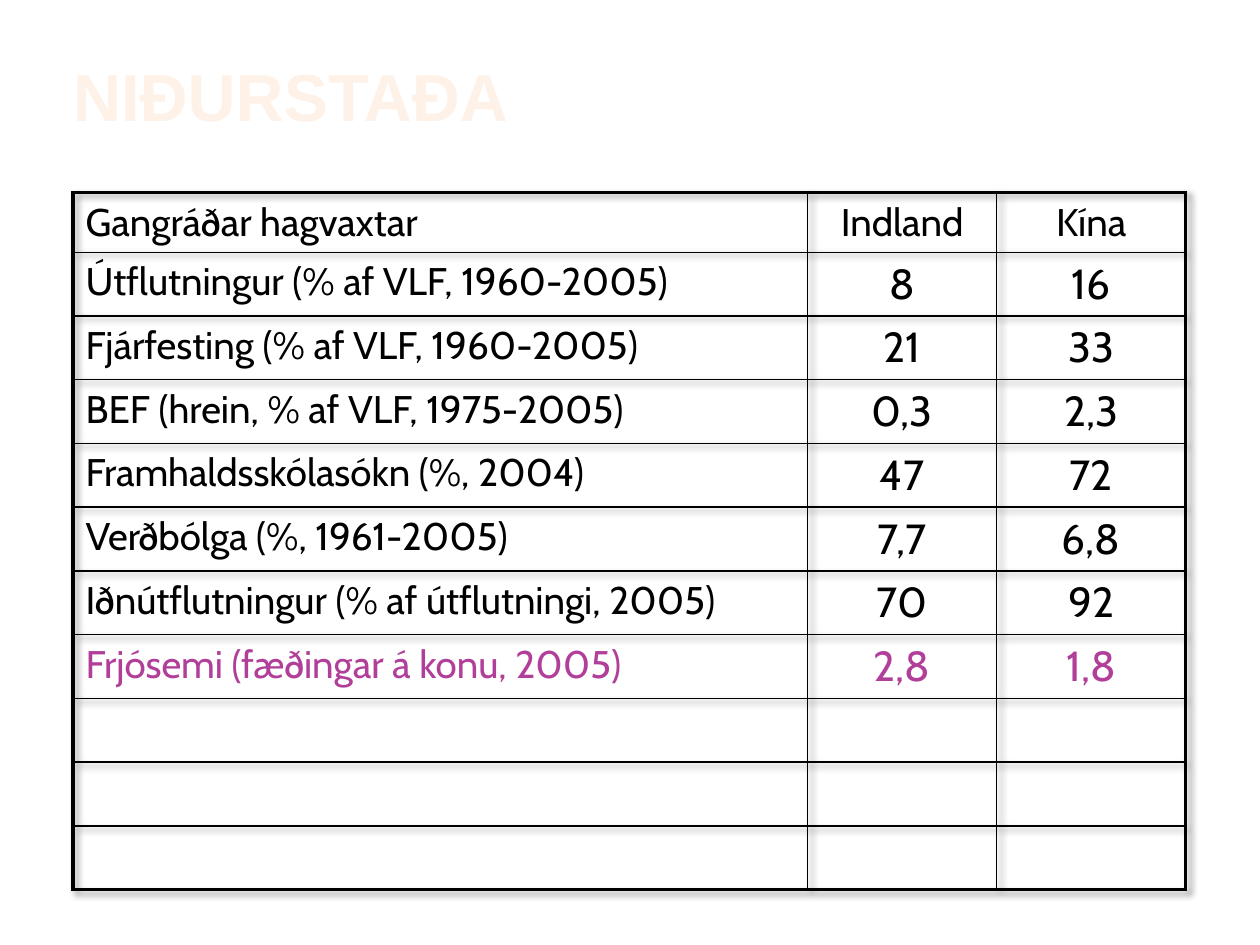
from dataclasses import dataclass

from lxml import etree
from pptx import Presentation
from pptx.dml.color import RGBColor
from pptx.enum.text import MSO_ANCHOR, PP_ALIGN
from pptx.oxml.ns import qn
from pptx.util import Inches, Pt

LEFT, CENTER = PP_ALIGN.LEFT, PP_ALIGN.CENTER
TOP, MIDDLE = MSO_ANCHOR.TOP, MSO_ANCHOR.MIDDLE


@dataclass(frozen=True)
class Theme:
    title_font: str = "Arial"
    body_font: str = "Cabin"
    title_color: str = "FEF2E8"
    text_color: str = "000000"
    accent_color: str = "B13F9A"
    line_color: str = "000000"
    title_size: float = 38
    label_size: float = 22
    value_size: float = 24
    outer_line: float = 2.25
    inner_line: float = 1


THEME = Theme()
TITLE = "NIÐURSTAÐA"
ROWS = [
    ("Gangráðar hagvaxtar", "Indland", "Kína"),
    ("Útflutningur (% af VLF, 1960-2005)", "8", "16"),
    ("Fjárfesting (% af VLF, 1960-2005)", "21", "33"),
    ("BEF (hrein, % af VLF, 1975-2005)", "0,3", "2,3"),
    ("Framhaldsskólasókn (%, 2004)", "47", "72"),
    ("Verðbólga (%, 1961-2005)", "7,7", "6,8"),
    ("Iðnútflutningur (% af útflutningi, 2005)", "70", "92"),
    ("Frjósemi (fæðingar á konu, 2005)", "2,8", "1,8"),
    ("", "", ""),
    ("", "", ""),
    ("", "", ""),
]
ACCENT_ROW = 7
COLUMN_WIDTHS = (5.83, 1.5, 1.5)
TABLE_HEIGHT = 5.53
HEADER_HEIGHT = 0.47


def style_paragraph(para, font, size, color, bold=False, align=LEFT):
    para.alignment = align
    para.font.name = font
    para.font.size = Pt(size)
    para.font.bold = bold
    para.font.color.rgb = RGBColor.from_string(color)


def add_title(page):
    title = page.shapes.title
    title.left, title.top = Inches(0.58), Inches(0.35)
    title.width, title.height = Inches(8.83), Inches(0.8)
    frame = title.text_frame
    frame.text = TITLE
    frame.margin_left = 0
    frame.vertical_anchor = MIDDLE
    style_paragraph(frame.paragraphs[0], THEME.title_font, THEME.title_size,
                    THEME.title_color, bold=True)


def add_solid_color(parent, color):
    fill = etree.SubElement(parent, qn("a:solidFill"))
    etree.SubElement(fill, qn("a:srgbClr"), val=color)


def set_borders(cell, outer_edges):
    properties = cell._tc.get_or_add_tcPr()
    for tag, outer in zip(("a:lnL", "a:lnR", "a:lnT", "a:lnB"), outer_edges):
        width = THEME.outer_line if outer else THEME.inner_line
        line = etree.SubElement(properties, qn(tag), w=str(Pt(width)))
        add_solid_color(line, THEME.line_color)


def add_table_shadow(table):
    effects = etree.Element(qn("a:effectLst"))
    shadow = etree.SubElement(effects, qn("a:outerShdw"), blurRad=str(Pt(4)),
                              dist=str(Pt(3)), dir="2700000", algn="tl")
    color = etree.SubElement(shadow, qn("a:prstClr"), val="black")
    etree.SubElement(color, qn("a:alpha"), val="40000")
    table._tbl.tblPr.insert(0, effects)


def fill_cell(cell, text, row, column):
    cell.text = text
    cell.vertical_anchor = TOP
    is_label = row == 0 or column == 0 and text
    style_paragraph(
        cell.text_frame.paragraphs[0],
        THEME.body_font,
        THEME.label_size if is_label else THEME.value_size,
        THEME.accent_color if row == ACCENT_ROW else THEME.text_color,
        align=CENTER if column else LEFT,
    )
    set_borders(cell, (column == 0, column == len(COLUMN_WIDTHS) - 1,
                       row == 0, row == len(ROWS) - 1))
    cell.fill.background()


def add_growth_table(page):
    frame = page.shapes.add_table(
        len(ROWS), len(COLUMN_WIDTHS), Inches(0.58), Inches(1.53),
        Inches(sum(COLUMN_WIDTHS)), Inches(TABLE_HEIGHT))
    table = frame.table
    table.first_row = False
    table.horz_banding = False
    add_table_shadow(table)
    for column, width in zip(table.columns, COLUMN_WIDTHS):
        column.width = Inches(width)
    body_height = (TABLE_HEIGHT - HEADER_HEIGHT) / (len(ROWS) - 1)
    for row, texts in enumerate(ROWS):
        table.rows[row].height = Inches(body_height if row else HEADER_HEIGHT)
        for column, text in enumerate(texts):
            fill_cell(table.cell(row, column), text, row, column)


def main():
    deck = Presentation()
    deck.slide_width, deck.slide_height = Inches(10), Inches(7.5)
    page = deck.slides.add_slide(deck.slide_layouts[5])
    add_title(page)
    add_growth_table(page)
    deck.save("out.pptx")


if __name__ == "__main__":
    main()
